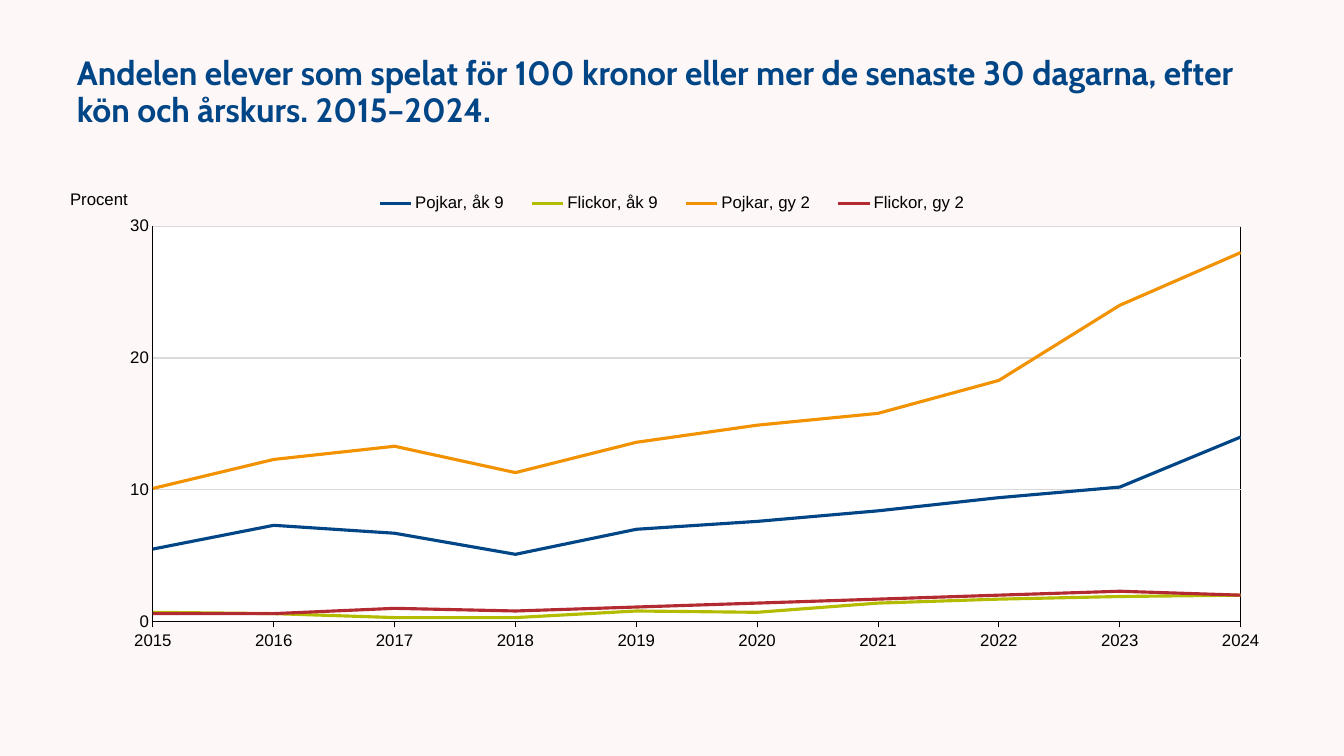
from lxml import etree
from pptx import Presentation
from pptx.chart.data import CategoryChartData
from pptx.dml.color import RGBColor
from pptx.enum.chart import XL_CHART_TYPE as ChartType, XL_LEGEND_POSITION as LegendPosition
from pptx.enum.chart import XL_TICK_MARK as TickMark
from pptx.enum.text import MSO_ANCHOR as Anchor
from pptx.oxml import parse_xml
from pptx.oxml.ns import nsdecls, qn
from pptx.util import Pt

EMU_PER_PX = 914400 / 100.8
COLORS = {
    "background": "FEF7F7",
    "title": "004687",
    "text": "000000",
    "axis": "000000",
    "grid": "D9D9D9",
    "plot": "FFFFFF",
}
YEARS = [str(year) for year in range(2015, 2025)]
SERIES = [
    ("Pojkar, åk 9", "004687", (5.5, 7.3, 6.7, 5.1, 7, 7.6, 8.4, 9.4, 10.2, 14)),
    ("Flickor, åk 9", "B3BC00", (0.7, 0.6, 0.3, 0.3, 0.8, 0.7, 1.4, 1.7, 1.9, 2)),
    ("Pojkar, gy 2", "F29200", (10.1, 12.3, 13.3, 11.3, 13.6, 14.9, 15.8, 18.3, 24, 28)),
    ("Flickor, gy 2", "B32B31", (0.6, 0.6, 1, 0.8, 1.1, 1.4, 1.7, 2, 2.3, 2)),
]


def px(length):
    return round(length * EMU_PER_PX)


def rgb(name):
    return RGBColor.from_string(COLORS[name])


def set_font(font, name="Arial", size=12, color="text", bold=False):
    font.name = name
    font.size = Pt(size)
    font.bold = bold
    font.color.rgb = rgb(color)


def set_line(line, color, width=0.75):
    line.color.rgb = rgb(color)
    line.width = Pt(width)


def write(text_frame, text, line_spacing=None, **font_format):
    paragraph = text_frame.paragraphs[0]
    paragraph.line_spacing = line_spacing
    run = paragraph.add_run()
    run.text = text
    set_font(run.font, **font_format)


def place(element, index, target=None, **fractions):
    """Give a chart part a manual layout, as fractions of the chart's size."""
    for old_layout in element.findall(qn("c:layout")):
        element.remove(old_layout)
    layout = etree.Element(qn("c:layout"))
    manual = etree.SubElement(layout, qn("c:manualLayout"))
    if target:
        etree.SubElement(manual, qn("c:layoutTarget"), val=target)
    for mode in ("xMode", "yMode"):
        etree.SubElement(manual, qn(f"c:{mode}"), val="edge")
    for name, value in fractions.items():
        etree.SubElement(manual, qn(f"c:{name}"), val=str(value))
    element.insert(index, layout)


class SlideBuilder:
    def __init__(self, presentation):
        self.slide = presentation.slides.add_slide(presentation.slide_layouts[6])
        fill = self.slide.background.fill
        fill.solid()
        fill.fore_color.rgb = rgb("background")

    def title(self, text, left, top, width, height):
        box = self.slide.shapes.add_textbox(px(left), px(top), px(width), px(height))
        frame = box.text_frame
        frame.word_wrap = True
        frame.vertical_anchor = Anchor.MIDDLE
        write(frame, text, line_spacing=0.9, name="Cabin", size=24, color="title", bold=True)

    def line_chart(self, left, top, width, height):
        data = CategoryChartData(number_format="0.0")
        data.categories = YEARS
        for name, _, values in SERIES:
            data.add_series(name, values)
        chart = self.slide.shapes.add_chart(
            ChartType.LINE, px(left), px(top), px(width), px(height), data
        ).chart
        chart.has_title = False
        set_font(chart.font)
        plot = chart.plots[0]
        plot.vary_by_categories = False
        for series, (_, color, _) in zip(plot.series, SERIES):
            series.smooth = False
            series.format.line.color.rgb = RGBColor.from_string(color)
            series.format.line.width = Pt(2.25)
        self.axes(chart)
        self.legend(chart)
        self.plot_area(chart)

    def axes(self, chart):
        years, percent = chart.category_axis, chart.value_axis
        for axis, tick in ((years, TickMark.OUTSIDE), (percent, TickMark.NONE)):
            axis.major_tick_mark = tick
            axis.minor_tick_mark = TickMark.NONE
            set_line(axis.format.line, "axis")
            set_font(axis.tick_labels.font)
        percent.minimum_scale, percent.maximum_scale, percent.major_unit = 0, 30, 10
        percent.tick_labels.number_format = "0"
        percent.tick_labels.number_format_is_linked = False
        set_line(percent.major_gridlines.format.line, "grid")
        title = percent.axis_title
        write(title.text_frame, "Procent")
        title_xml = title._element
        body = title_xml.find(".//" + qn("a:bodyPr"))
        body.set("rot", "0")
        body.set("vert", "horz")
        place(title_xml, 1, x=0.0, y=0.02)

    def legend(self, chart):
        chart.has_legend = True
        legend = chart.legend
        legend.position = LegendPosition.TOP
        legend.include_in_layout = False
        set_font(legend.font)
        place(legend._element, 1, x=0.24, y=0.03, w=0.52, h=0.05)

    def plot_area(self, chart):
        """Start the lines on the value axis; fill and frame the plot."""
        chart_space = chart._chartSpace
        area = chart_space.find(".//" + qn("c:plotArea"))
        place(area, 0, target="inner", x=0.071, y=0.102, w=0.899, h=0.802)
        value_axis = area.find(qn("c:valAx"))
        for old_crossing in value_axis.findall(qn("c:crossBetween")):
            value_axis.remove(old_crossing)
        value_axis.find(qn("c:crosses")).addnext(
            parse_xml(f'<c:crossBetween {nsdecls("c")} val="midCat"/>')
        )
        area.append(parse_xml(
            f'<c:spPr {nsdecls("c", "a")}>'
            f'<a:solidFill><a:srgbClr val="{COLORS["plot"]}"/></a:solidFill>'
            f'<a:ln w="{Pt(0.75)}"><a:solidFill><a:srgbClr val="{COLORS["axis"]}"/>'
            "</a:solidFill></a:ln></c:spPr>"
        ))
        chart_space.find(qn("c:chart")).addnext(parse_xml(
            f'<c:spPr {nsdecls("c", "a")}><a:noFill/><a:ln><a:noFill/></a:ln></c:spPr>'
        ))


def main():
    presentation = Presentation()
    presentation.slide_width, presentation.slide_height = px(1344), px(756)
    builder = SlideBuilder(presentation)
    builder.title(
        "Andelen elever som spelat för 100 kronor eller mer de senaste 30 dagarna, "
        "efter kön och årskurs. 2015–2024.",
        67, 30, 1210, 126,
    )
    builder.line_chart(67, 176, 1210, 493)
    presentation.save("out.pptx")


if __name__ == "__main__":
    main()
